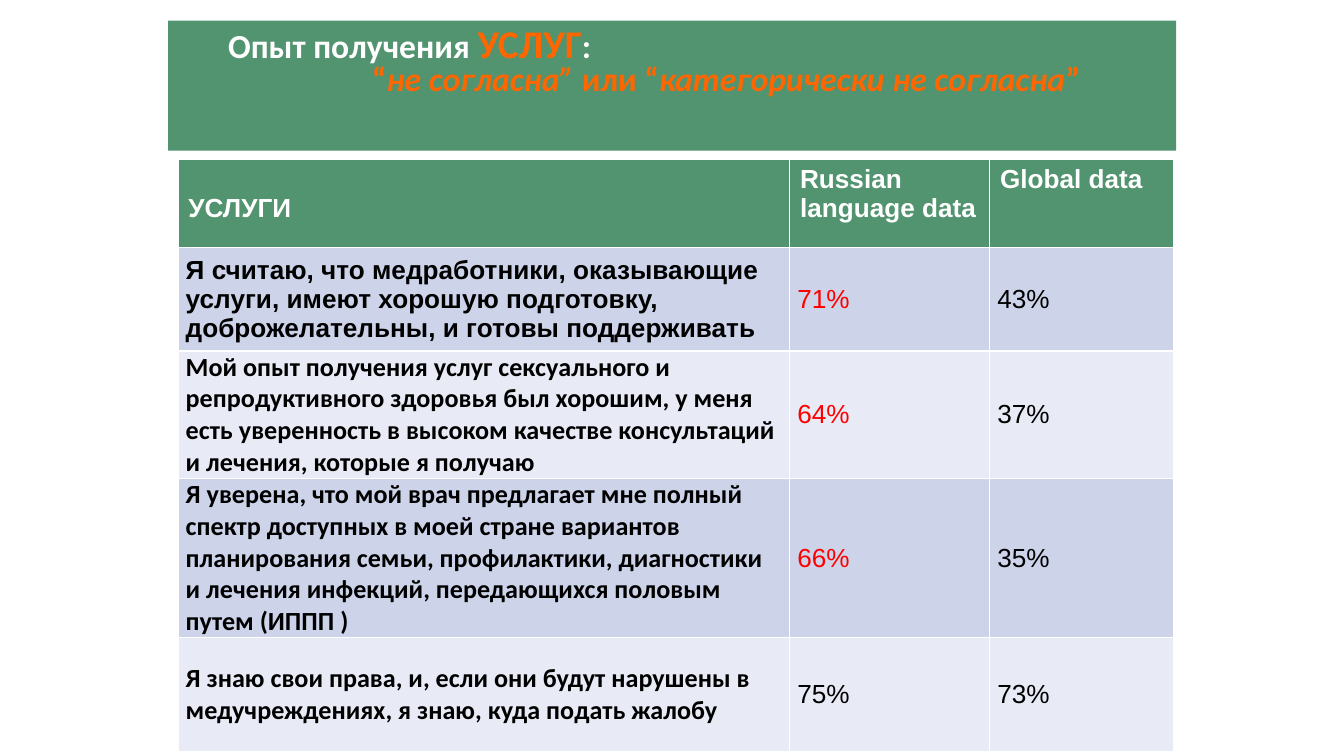
from pptx import Presentation
from pptx import util as u
from pptx.dml import color
from pptx.enum import shapes, text

COLORS = {"green": "51946F", "white": "FFFFFF", "orange": "FF6600", "black": "000000",
          "red": "FF0000", "band_dark": "CDD4EA", "band_light": "E8EBF5"}

TITLE = [
    (0, [("Опыт получения ", 18, "white", False), ("УСЛУГ", 21, "orange", False),
         (":", 18, "white", False)]),
    (2.72, [("“", 18, "orange", False), ("не согласна”", 18, "orange", True),
            (" или “", 18, "orange", False), ("категорически не согласна", 18, "orange", True),
            ("”", 18, "orange", False)]),
]
HEADERS = ["УСЛУГИ", "Russian language data", "Global data"]
ROWS = [
    ("Я считаю, что медработники, оказывающие услуги, имеют хорошую подготовку, "
     "доброжелательны, и готовы поддерживать", "Arial", "71%", "red", "43%"),
    ("Мой опыт получения услуг сексуального и репродуктивного здоровья был хорошим, "
     "у меня есть уверенность в высоком качестве консультаций и лечения, которые я получаю",
     "Calibri", "64%", "red", "37%"),
    ("Я уверена, что мой врач предлагает мне полный спектр доступных в моей стране вариантов "
     "планирования семьи, профилактики, диагностики и лечения инфекций, передающихся "
     "половым путем (ИППП )", "Calibri", "66%", "red", "35%"),
    ("Я знаю свои права, и, если они будут нарушены в медучреждениях, я знаю, "
     "куда подать жалобу", "Calibri", "75%", "black", "73%"),
]
COLUMN_WIDTHS = [11.56, 3.78, 3.48]
ROW_HEIGHTS = [1.68, 1.96, 2.16, 2.87, 2.16]


def apply(target, values):
    for name, value in values.items():
        setattr(target, name, value)


def margins(left, top, bottom):
    return {"margin_left": u.Cm(left), "margin_right": u.Cm(left),
            "margin_top": u.Cm(top), "margin_bottom": u.Cm(bottom)}


class SlideBuilder:
    def __init__(self, slide):
        self.slide = slide
        self.header_format = {"vertical_anchor": text.MSO_ANCHOR.TOP, **margins(0.2, 0.11, 0.11)}
        self.body_format = {"vertical_anchor": text.MSO_ANCHOR.MIDDLE, **margins(0.15, 0, 0)}

    def paint(self, target, name):
        target.fill.solid()
        target.fill.fore_color.rgb = color.RGBColor.from_string(COLORS[name])

    def span(self, para, words, size, name, font="Arial", bold=False, italic=False):
        span = para.add_run()
        span.text = words
        apply(span.font, {"name": font, "size": u.Pt(size), "bold": bold, "italic": italic})
        span.font.color.rgb = color.RGBColor.from_string(COLORS[name])

    def band(self, left, top, width, height):
        box = self.slide.shapes.add_shape(shapes.MSO_SHAPE.RECTANGLE, u.Cm(left), u.Cm(top),
                                          u.Cm(width), u.Cm(height))
        box.shadow.inherit = False
        box.line.fill.background()
        self.paint(box, "green")
        self.slide.shapes.title.element.addprevious(box.element)

    def title(self, left, top, width, height, lines):
        box = self.slide.shapes.title
        apply(box, {"left": u.Cm(left), "top": u.Cm(top),
                    "width": u.Cm(width), "height": u.Cm(height)})
        frame = box.text_frame
        apply(frame, {"word_wrap": True, "auto_size": text.MSO_AUTO_SIZE.NONE,
                      "vertical_anchor": text.MSO_ANCHOR.MIDDLE, **margins(0.18, 0.1, 0.1)})
        for index, (indent, spans) in enumerate(lines):
            para = frame.add_paragraph() if index else frame.paragraphs[0]
            apply(para, {"alignment": text.PP_ALIGN.LEFT, "line_spacing": 0.8,
                         "space_before": u.Pt(0)})
            para._p.get_or_add_pPr().set("marL", str(u.Cm(indent)))
            for words, size, name, italic in spans:
                self.span(para, words, size, name, "Calibri", True, italic)

    def cell(self, cell, words, fill, layout, name, font="Arial", bold=False):
        apply(cell, layout)
        self.paint(cell, fill)
        self.span(cell.text_frame.paragraphs[0], words, 14, name, font, bold)

    def table(self, left, top, widths, heights, headers, rows):
        frame = self.slide.shapes.add_table(len(heights), len(widths), u.Cm(left), u.Cm(top),
                                            u.Cm(sum(widths)), u.Cm(sum(heights)))
        table = frame.table
        for column, width in zip(table.columns, widths):
            column.width = u.Cm(width)
        for row, height in zip(table.rows, heights):
            row.height = u.Cm(height)
        for index, words in enumerate(headers):
            self.cell(table.cell(0, index), words, "green", self.header_format, "white", bold=True)
        table.cell(0, 0).margin_top = u.Cm(0.67)
        for index, (statement, font, local, name, overall) in enumerate(rows, 1):
            fill = "band_dark" if index % 2 else "band_light"
            self.cell(table.cell(index, 0), statement, fill, self.body_format, "black", font, True)
            self.cell(table.cell(index, 1), local, fill, self.body_format, name)
            self.cell(table.cell(index, 2), overall, fill, self.body_format, "black")


def main():
    deck = Presentation()
    apply(deck, {"slide_width": u.Cm(25.4), "slide_height": u.Cm(14.29)})
    page = SlideBuilder(deck.slides.add_slide(deck.slide_layouts[5]))
    page.band(3.18, 0.39, 19.05, 2.46)
    page.title(4.13, 0.25, 17.15, 1.88, TITLE)
    page.table(3.36, 3, COLUMN_WIDTHS, ROW_HEIGHTS, HEADERS, ROWS)
    deck.save("out.pptx")


if __name__ == "__main__":
    main()
